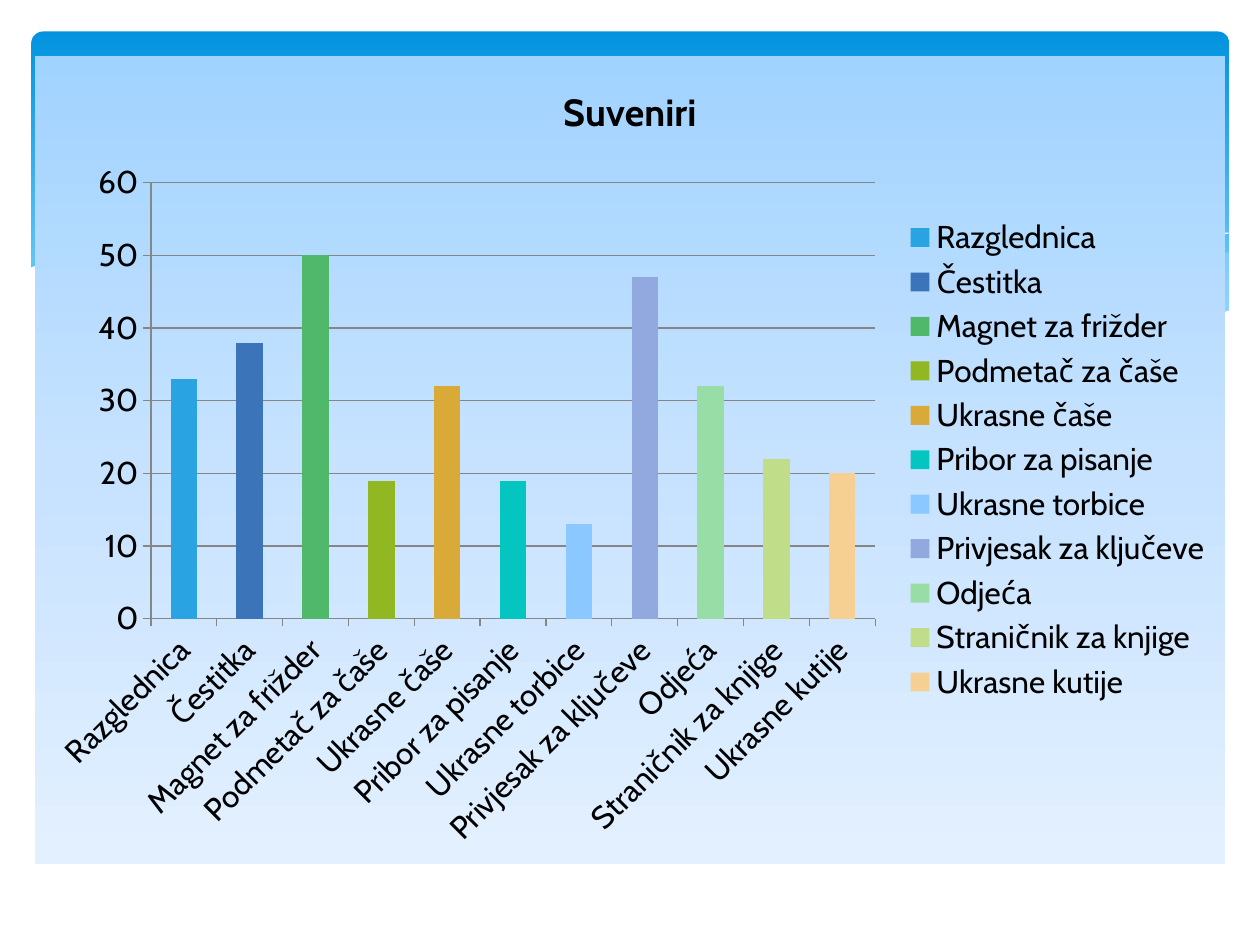
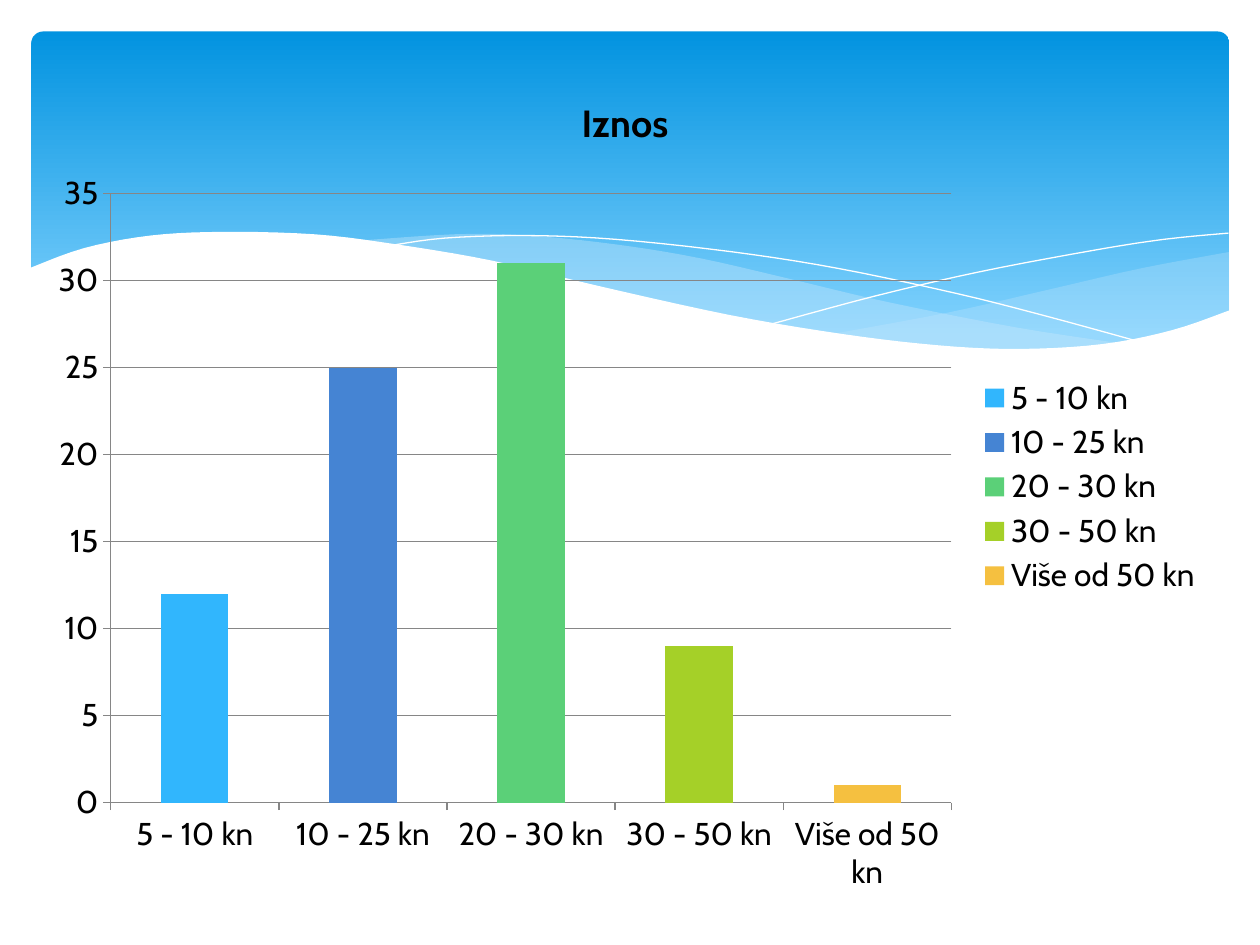
from lxml import etree
from pptx import Presentation
from pptx.chart.data import CategoryChartData
from pptx.dml.color import RGBColor
from pptx.enum.chart import XL_CHART_TYPE as ChartType
from pptx.enum.chart import XL_LEGEND_POSITION as LegendSide
from pptx.enum.chart import XL_TICK_MARK as Tick
from pptx.enum.shapes import MSO_SHAPE as Shape
from pptx.oxml import parse_xml
from pptx.oxml.ns import nsdecls, qn
from pptx.util import Pt

SKY = [(0, "0293E0"), (90, "83D3FE")]
PALE_SKY = [(0, "A1D3FF"), (50, "C6E2FF"), (100, "E3F0FF")]
MIST, WHITE, BLACK, GRID = "C6E7FC", "FFFFFF", "000000", "868686"

RIGHT_CREST = [(702.5, 144), (652, 153.4), (599, 165.6), (542, 178.6), (476, 190.8)]
RIGHT_TROUGH = [(476, 190.8), (517, 196.6), (562, 199.4), (608, 199.4),
                (652, 193.7), (678, 186.5), (702.5, 177.8)]
MIDDLE_CREST = [(643, 196.6), (581, 187.2), (508, 172.8), (453, 159.8), (400, 147.6),
                (352, 139.7), (302, 134.6), (260, 133.9), (206, 137.5)]
MIDDLE_TROUGH = [(206, 137.5), (261, 146.2), (323, 159.8), (382, 172.8), (445, 185.8),
                 (500, 194.4), (548, 199.4), (589, 200.9), (617, 199.4), (643, 196.6)]
FALLING_LINE = [(222.5, 140.4), (254, 136.1), (300, 134.6), (352, 136.8), (419, 144),
                (479, 153.4), (547, 167.8), (598, 180.7), (653, 195.8)]
RISING_LINE = [(441.5, 185), (500, 169.2), (559, 155.5), (623.5, 143.3),
               (665, 136.8), (702, 133.2)]
PAPER_EDGE = [(703.5, 177), (670, 188.6), (630, 196.6), (582.5, 199.4), (536, 197.3),
              (481, 190.8), (417, 180), (342, 163.4), (281.5, 149), (227, 139.7),
              (180, 133.9), (127.5, 132.5), (86, 134.6), (48, 141.8), (16.5, 153.4)]
PAPER_FOOT = [(16.5, 237), (703.5, 237)]

SOUVENIRS = [
    ("Razglednica", 33, "2AA3E3"),
    ("Čestitka", 38, "3C74BA"),
    ("Magnet za frižder", 50, "50B86A"),
    ("Podmetač za čaše", 19, "91B823"),
    ("Ukrasne čaše", 32, "DAAA38"),
    ("Pribor za pisanje", 19, "05C5C1"),
    ("Ukrasne torbice", 13, "8AC8FF"),
    ("Privjesak za ključeve", 47, "91A9DE"),
    ("Odjeća", 32, "97DDA5"),
    ("Straničnik za knjige", 22, "C0DD8A"),
    ("Ukrasne kutije", 20, "F6D092"),
]
AMOUNTS = [
    ("5 - 10 kn", 12, "31B6FD"),
    ("10 - 25 kn", 25, "4584D3"),
    ("20 - 30 kn", 31, "5BD078"),
    ("30 - 50 kn", 9, "A5D028"),
    ("Više od 50 kn", 1, "F5C040"),
]


def rgb(value):
    return RGBColor.from_string(value)


def format_font(font, size=18, color=BLACK, bold=False, name="Cabin"):
    font.size, font.bold, font.name = Pt(size), bold, name
    font.color.rgb = rgb(color)


def write_text(frame, text, **style):
    frame.text = text
    format_font(frame.paragraphs[0].runs[0].font, **style)


def gradient(stops):
    marks = "".join(f'<a:gs pos="{place * 1000}"><a:srgbClr val="{color}"/></a:gs>'
                    for place, color in stops)
    return parse_xml(f'<a:gradFill {nsdecls("a")} rotWithShape="1"><a:gsLst>{marks}</a:gsLst>'
                     '<a:lin ang="5400000" scaled="0"/></a:gradFill>')


def smooth(knots, steps=5):
    padded = [knots[0], *knots, knots[-1]]
    points = []
    for before, start, end, after in zip(padded, padded[1:], padded[2:], padded[3:]):
        for step in range(steps):
            t = step / steps
            points.append(tuple(
                b + 0.5 * t * (c - a + t * (2 * a - 5 * b + 4 * c - d + t * (3 * (b - c) + d - a)))
                for a, b, c, d in zip(before, start, end, after)))
    return points + [knots[-1]]


class Deck:
    def __init__(self):
        self.show = Presentation()
        self.show.slide_width, self.show.slide_height = Pt(720), Pt(540)
        self.slide = None

    def new_slide(self):
        self.slide = self.show.slides.add_slide(self.show.slide_layouts[6])
        self.header()
        self.wave(smooth(RIGHT_CREST) + smooth(RIGHT_TROUGH), fill=MIST, opacity=29)
        self.wave(smooth(MIDDLE_CREST) + smooth(MIDDLE_TROUGH), fill=MIST, opacity=40)
        self.wave(smooth(FALLING_LINE), line=WHITE)
        self.wave(smooth(RISING_LINE), line=WHITE)
        self.wave(smooth(PAPER_EDGE) + PAPER_FOOT, fill=WHITE)

    def header(self):
        header = self.slide.shapes.add_shape(
            Shape.ROUNDED_RECTANGLE, Pt(18), Pt(18), Pt(684.5), Pt(194.5))
        header.adjustments[0] = 0.034
        header.shadow.inherit = False
        header.line.fill.background()
        header._element.spPr.find(qn("a:prstGeom")).addnext(gradient(SKY))

    def wave(self, points, fill=None, opacity=100, line=None):
        scaled = [(Pt(x), Pt(y)) for x, y in points]
        builder = self.slide.shapes.build_freeform(*scaled[0])
        builder.add_line_segments(scaled[1:], close=fill is not None)
        wave = builder.convert_to_shape()
        wave.shadow.inherit = False
        if fill:
            wave.fill.solid()
            wave.fill.fore_color.rgb = rgb(fill)
            tint = wave._element.spPr.find(qn("a:solidFill"))[0]
            etree.SubElement(tint, qn("a:alpha"), val=str(opacity * 1000))
        else:
            wave.fill.background()
        if line:
            wave.line.color.rgb = rgb(line)
            wave.line.width = Pt(0)
        else:
            wave.line.fill.background()

    def columns(self, title, rows, box, top, step, backdrop=None):
        names, values, colors = zip(*rows)
        data = CategoryChartData()
        data.categories = names
        data.add_series(title, values)
        chart = self.slide.shapes.add_chart(
            ChartType.COLUMN_CLUSTERED, *map(Pt, box), data).chart
        format_font(chart.font)
        chart.has_title = True
        write_text(chart.chart_title.text_frame, title, size=21.6, bold=True)
        chart.chart_title.include_in_layout = False
        chart.has_legend = True
        chart.legend.position = LegendSide.RIGHT
        chart.legend.include_in_layout = False
        self.axes(chart, top, step)
        plot = chart.plots[0]
        plot.gap_width, plot.vary_by_categories = 150, True
        for index, color in enumerate(colors):
            fill = plot.series[0].points[index].format.fill
            fill.solid()
            fill.fore_color.rgb = rgb(color)
        if backdrop:
            area = parse_xml(f'<c:spPr {nsdecls("c", "a")}><a:ln><a:noFill/></a:ln></c:spPr>')
            area.insert(0, gradient(backdrop))
            chart._chartSpace.chart.addnext(area)

    def axes(self, chart, top, step):
        amounts = chart.value_axis
        amounts.minimum_scale, amounts.maximum_scale, amounts.major_unit = 0, top, step
        amounts.has_major_gridlines = True
        for axis in (chart.category_axis, amounts):
            axis.major_tick_mark = Tick.OUTSIDE
        for part in (chart.category_axis, amounts, amounts.major_gridlines):
            part.format.line.color.rgb = rgb(GRID)
            part.format.line.width = Pt(0.75)


def main():
    deck = Deck()
    deck.new_slide()
    deck.columns("Suveniri", SOUVENIRS, (20, 32, 680, 461.5), 60, 10, backdrop=PALE_SKY)
    deck.new_slide()
    deck.columns("Iznos", AMOUNTS, (20, 37.5, 674.5, 481.5), 35, 5)
    deck.show.save("out.pptx")


if __name__ == "__main__":
    main()
